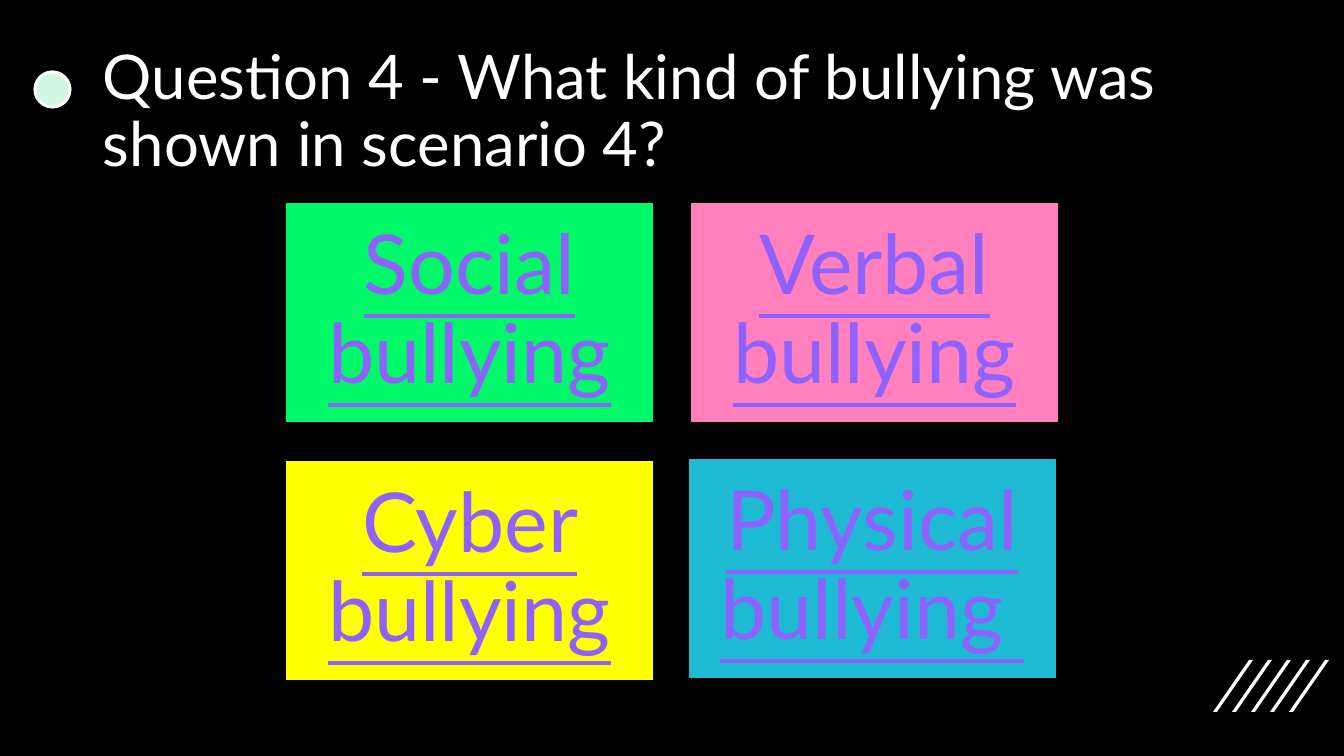
import pptx
import pptx.dml.color
import pptx.enum.shapes
import pptx.enum.text
import pptx.util

EMU_PER_PX = 914400 / 100.8
FONT = "Lato"
WHITE, BLACK, VIOLET, MINT = "FFFFFF", "000000", "8F61FF", "CFF7E1"
SHAPES = pptx.enum.shapes.MSO_SHAPE


def px(length):
    return pptx.util.Emu(round(length * EMU_PER_PX))


def paint(target, color):
    target.solid()
    target.fore_color.rgb = pptx.dml.color.RGBColor.from_string(color)


def style_shape(shape, fill, line=None, line_width=0):
    shape.shadow.inherit = False
    paint(shape.fill, fill)
    if line:
        paint(shape.line.fill, line)
        shape.line.width = pptx.util.Pt(line_width)
    else:
        shape.line.fill.background()


def write(shape, text, size, color, align, margins):
    frame = shape.text_frame
    frame.word_wrap = True
    frame.vertical_anchor = pptx.enum.text.MSO_ANCHOR.MIDDLE
    frame.margin_left = frame.margin_right = px(margins[0])
    frame.margin_top = frame.margin_bottom = px(margins[1])
    para = frame.paragraphs[0]
    para.text = text
    para.alignment = align
    para.line_spacing = 0.9
    para.font.name = FONT
    para.font.size = pptx.util.Pt(size)
    paint(para.font.fill, color)
    return para


def add_stripes(page, left, top, width, height):
    """Slanted stripes in the corner, spread evenly over the width."""
    count, step, thickness = 5, 19, 4
    lean = width - step * (count - 1) - thickness
    for index in range(count):
        start = left + index * step
        builder = page.shapes.build_freeform(start, top + height, EMU_PER_PX)
        builder.add_line_segments([
            (start + lean, top),
            (start + lean + thickness, top),
            (start + thickness, top + height),
        ])
        style_shape(builder.convert_to_shape(), WHITE)


def add_heading(page, left, top, width, height, text):
    """Dot marker and question."""
    dot_size, dot_top, text_indent = 35, 32, 58
    dot = page.shapes.add_shape(SHAPES.OVAL, px(left), px(top + dot_top),
                                px(dot_size), px(dot_size))
    style_shape(dot, MINT, WHITE, 2.25)
    box = page.shapes.add_textbox(px(left + text_indent), px(top),
                                  px(width - text_indent), px(height))
    write(box, text, 44, WHITE, pptx.enum.text.PP_ALIGN.LEFT, (10, 5))


def add_answer(page, left, top, width, height, text, fill):
    """One coloured answer card."""
    card = page.shapes.add_shape(SHAPES.RECTANGLE, px(left), px(top),
                                 px(width), px(height))
    style_shape(card, fill, BLACK, 1)
    para = write(card, text, 59, VIOLET,
                 pptx.enum.text.PP_ALIGN.CENTER, (25, 25))
    para.font.underline = True


def add_answers(page, left, top, width, height, answers):
    """Answer cards in a grid of two columns; each may be nudged a little."""
    card_width, card_height = 369, 221
    for index, (text, fill, nudge) in enumerate(answers):
        row, column = divmod(index, 2)
        add_answer(page,
                   left + column * (width - card_width) + nudge,
                   top + row * (height - card_height) + nudge,
                   card_width, card_height, text, fill)


def main():
    deck = pptx.Presentation()
    deck.slide_width, deck.slide_height = px(1344), px(756)
    page = deck.slides.add_slide(deck.slide_layouts[6])
    paint(page.background.fill, BLACK)

    add_stripes(page, 1213, 660, 116, 52)
    add_heading(page, 35, 40, 1217, 146,
                "Question 4 - What kind of bullying was shown in scenario 4?")
    add_answers(page, 285, 202, 774, 479, [
        ("Social bullying", "00F968", 0),
        ("Verbal bullying", "FF80BD", 0),
        ("Cyber bullying", "FFFF00", 0),
        ("Physical bullying ", "1EB9D3", -2),
    ])
    deck.save("out.pptx")


if __name__ == "__main__":
    main()
